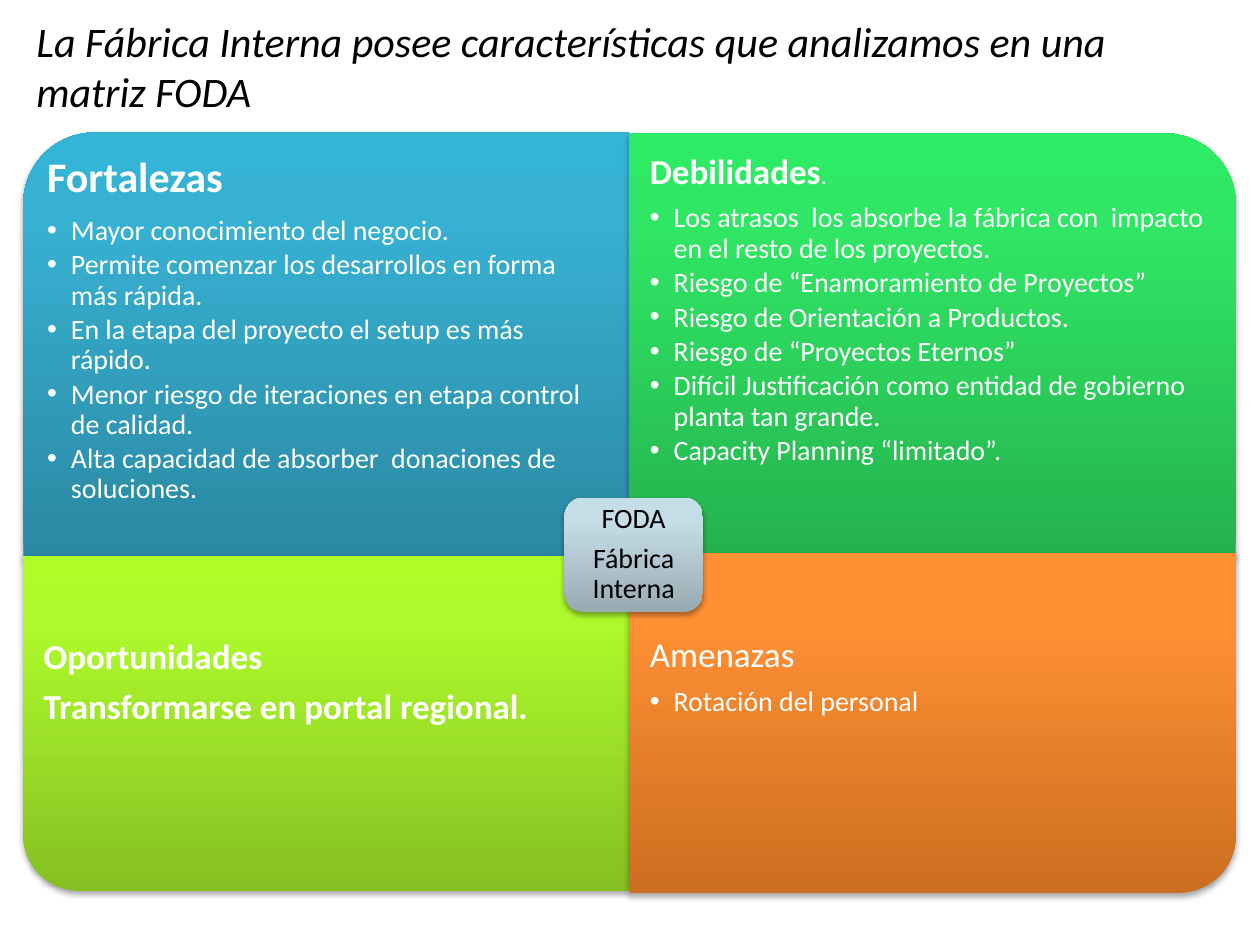
from lxml import etree
from pptx import Presentation
from pptx.dml.color import RGBColor
from pptx.enum.shapes import MSO_SHAPE as Preset
from pptx.enum.text import MSO_ANCHOR as Anchor, MSO_AUTO_SIZE as AutoSize, PP_ALIGN as Align
from pptx.oxml import parse_xml
from pptx.oxml.ns import nsdecls, qn
from pptx.util import Cm, Pt

THEME = {
    "font": "Calibri",
    "white": RGBColor(255, 255, 255),
    "black": RGBColor(0, 0, 0),
    "title": 24,
    "heading": 20,
    "item": 16,
    "period": 14,
    # Gradient stops at 0, 80 and 100 %, from the bottom up
    "blue": ("2A88A2", "37B1D2", "34B4D6"),
    "green": ("25B24E", "30E765", "2DEB64"),
    "lime": ("85C022", "ADF92C", "AFFE28"),
    "orange": ("CC6E20", "FF9034", "FF9136"),
    "grey": ("98AAB2", "C5DDE7", "C6DEE9"),
}


def style_panel(shape, colors):
    """Vertical gradient that stays upright, no outline, soft shadow below."""
    shape.line.fill.background()
    stops = "".join(f'<a:gs pos="{position}000"><a:srgbClr val="{color}"/></a:gs>'
                    for position, color in zip((0, 80, 100), colors))
    properties = shape._element.spPr
    properties.find(qn("a:prstGeom")).addnext(parse_xml(
        f'<a:gradFill {nsdecls("a")} rotWithShape="0"><a:gsLst>{stops}</a:gsLst>'
        '<a:lin ang="16200000" scaled="0"/></a:gradFill>'))
    properties.append(parse_xml(
        f'<a:effectLst {nsdecls("a")}><a:outerShdw blurRad="40000" dist="23000" dir="5400000" '
        'rotWithShape="0"><a:srgbClr val="000000"><a:alpha val="35000"/></a:srgbClr>'
        '</a:outerShdw></a:effectLst>'))


def write_paragraph(frame, text, size, color, bold=False, bullet=False, align=Align.LEFT):
    """Fill the empty first paragraph, or add one, and format it."""
    first = frame.paragraphs[0]
    paragraph = frame.add_paragraph() if first.runs else first
    paragraph.add_run().text = text
    paragraph.alignment = align
    paragraph.line_spacing = 0.9
    paragraph.space_before = Pt(0)
    paragraph.space_after = Pt(size * (0.15 if bullet else 0.35))
    font = paragraph.font
    font.name, font.size, font.bold = THEME["font"], Pt(size), bold
    font.color.rgb = color
    properties = paragraph._p.get_or_add_pPr()
    indent = Cm(0.48) if bullet else 0
    properties.set("marL", str(indent))
    properties.set("indent", str(-indent))
    mark = parse_xml(f'<a:buChar {nsdecls("a")} char="•"/>' if bullet
                     else f'<a:buNone {nsdecls("a")}/>')
    properties.find(qn("a:defRPr")).addprevious(mark)
    return paragraph


presentation = Presentation()
presentation.slide_width, presentation.slide_height = Cm(25.4), Cm(19.05)
slide = presentation.slides.add_slide(presentation.slide_layouts[4])
shapes = slide.shapes

# Title
title = shapes.title
title.left, title.top, title.width, title.height = Cm(0.48), Cm(-0.08), Cm(23.62), Cm(2.8)
title.text_frame.text = "La Fábrica Interna posee características que analizamos en una matriz FODA"
title.text_frame.vertical_anchor = Anchor.MIDDLE
title.text_frame.auto_size = AutoSize.NONE
paragraph = title.text_frame.paragraphs[0]
paragraph.alignment = Align.LEFT
paragraph.font.name, paragraph.font.size = THEME["font"], Pt(THEME["title"])
paragraph.font.italic = True
paragraph.font.color.rgb = THEME["black"]

# Quadrants: color, column, panel top and height, rotation,
# text top and height, side inset, top inset, heading, heading size, bold, items
quadrants = [
    ("blue", 0, 2.67, 8.61, 270, 2.67, 6.48, 0.48, 0.48,
     "Fortalezas", THEME["title"], True,
     ["Mayor conocimiento del negocio.",
      "Permite comenzar los desarrollos en forma más rápida.",
      "En la etapa del proyecto el setup es más rápido.",
      "Menor riesgo de iteraciones en etapa control de calidad.",
      "Alta capacidad de absorber  donaciones de soluciones."]),
    ("green", 1, 2.69, 8.53, 0, 2.69, 6.4, 0.41, 0.41,
     "Debilidades", THEME["heading"], True,
     ["Los atrasos  los absorbe la fábrica con  impacto en el resto de los proyectos.",
      "Riesgo de “Enamoramiento de Proyectos”",
      "Riesgo de Orientación a Productos.",
      "Riesgo de “Proyectos Eternos”",
      "Difícil Justificación como entidad de gobierno planta tan grande.",
      "Capacity Planning “limitado”."]),
    ("lime", 0, 11.2, 6.76, 180, 12.88, 5.05, 0.41, 0,
     "Oportunidades", THEME["heading"], True, []),
    ("orange", 1, 11.14, 6.86, 90, 12.85, 5.13, 0.41, 0,
     "Amenazas", THEME["heading"], False, ["Rotación del personal"]),
]
LEFT, WIDTH = 0.47, 12.22
bodies = [placeholder for placeholder in slide.placeholders
          if placeholder.placeholder_format.idx in (1, 2, 3, 4)]

for body, (color, column, top, height, rotation, text_top, text_height,
           side_inset, top_inset, heading, size, bold, items) in zip(bodies, quadrants):
    left = LEFT + column * WIDTH
    # A quarter turn swaps the sides around the same centre
    across, down = (height, WIDTH) if rotation in (90, 270) else (WIDTH, height)
    panel = shapes.add_shape(Preset.ROUND_1_RECTANGLE,
                             Cm(left + (WIDTH - across) / 2), Cm(top + (height - down) / 2),
                             Cm(across), Cm(down))
    panel.rotation = rotation
    style_panel(panel, THEME[color])

    # Text goes in front of its panel
    shapes._spTree.append(body._element)
    body.left, body.top, body.width, body.height = (
        Cm(left), Cm(text_top), Cm(WIDTH), Cm(text_height))
    frame = body.text_frame
    frame.auto_size, frame.vertical_anchor = AutoSize.NONE, Anchor.TOP
    frame.margin_left = frame.margin_right = Cm(side_inset)
    frame.margin_top, frame.margin_bottom = Cm(top_inset), Cm(0.3)
    paragraph = write_paragraph(frame, heading, size, THEME["white"], bold)
    if heading == "Debilidades":
        period = paragraph.add_run()
        period.text = "."
        period.font.size, period.font.bold = Pt(THEME["period"]), False
    if heading == "Oportunidades":
        write_paragraph(frame, "Transformarse en portal regional.", size, THEME["white"], bold)
    for item in items:
        write_paragraph(frame, item, THEME["item"], THEME["white"], bullet=True)

# Centre label
label = shapes.add_shape(Preset.ROUNDED_RECTANGLE, Cm(11.38), Cm(10.03), Cm(2.79), Cm(2.31))
style_panel(label, THEME["grey"])
frame = label.text_frame
frame.word_wrap, frame.vertical_anchor = True, Anchor.MIDDLE
frame.margin_left = frame.margin_right = frame.margin_top = frame.margin_bottom = Cm(0.18)
for text in ("FODA", "Fábrica Interna"):
    write_paragraph(frame, text, THEME["item"], THEME["black"], align=Align.CENTER)

presentation.save("out.pptx")
